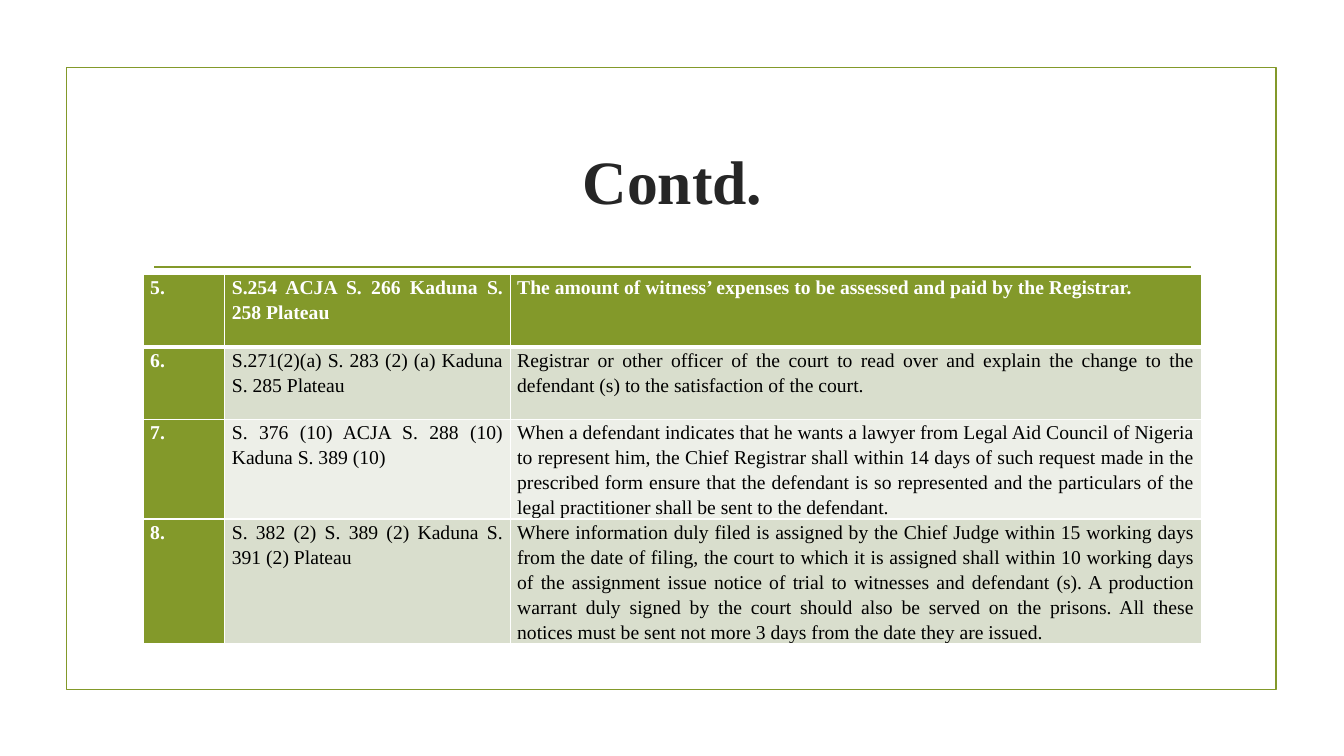
from lxml import etree
from pptx import Presentation
from pptx.dml.color import RGBColor
from pptx.enum import shapes, text
from pptx.oxml import ns
from pptx.util import Inches, Pt

OLIVE = RGBColor(0x83, 0x99, 0x2A)
SAGE = RGBColor(0xD9, 0xDE, 0xCD)
MIST = RGBColor(0xED, 0xEF, 0xE8)
CHARCOAL = RGBColor(0x26, 0x26, 0x26)
WHITE = RGBColor(0xFF, 0xFF, 0xFF)
BLACK = RGBColor(0, 0, 0)
FONT = "Times New Roman"

COLUMN_WIDTHS = (0.81, 2.83, 6.86)
ROW_HEIGHTS = (0.72, 0.72, 0.99, 1.23)
DUTIES = (
    ("5.", "S.254 ACJA S. 266 Kaduna S. 258 Plateau",
     "The amount of witness’ expenses to be assessed and paid by the Registrar."),
    ("6.", "S.271(2)(a) S. 283 (2) (a) Kaduna S. 285 Plateau",
     "Registrar or other officer of the court to read over and explain the change "
     "to the defendant (s) to the satisfaction of the court."),
    ("7.", "S. 376 (10) ACJA S. 288 (10) Kaduna S. 389 (10)",
     "When a defendant indicates that he wants a lawyer from Legal Aid Council of "
     "Nigeria to represent him, the Chief Registrar shall within 14 days of such "
     "request made in the prescribed form ensure that the defendant is so represented "
     "and the particulars of the legal practitioner shall be sent to the defendant."),
    ("8.", "S. 382 (2) S. 389 (2) Kaduna S. 391 (2) Plateau",
     "Where information duly filed is assigned by the Chief Judge within 15 working "
     "days from the date of filing, the court to which it is assigned shall within 10 "
     "working days of the assignment issue notice of trial to witnesses and defendant "
     "(s). A production warrant duly signed by the court should also be served on the "
     "prisons. All these notices must be sent not more 3 days from the date they are "
     "issued."),
)


def set_font(font, size, color, bold):
    for name, value in {"name": FONT, "size": Pt(size), "bold": bold}.items():
        setattr(font, name, value)
    font.color.rgb = color


def add_frame(slide):
    frame = slide.shapes.add_shape(shapes.MSO_SHAPE.RECTANGLE, Inches(0.66),
                                   Inches(0.67), Inches(12), Inches(6.17))
    frame.shadow.inherit = False
    frame.fill.background()
    frame.line.color.rgb = OLIVE
    frame.line.width = Pt(1.25)


def add_rule(slide):
    rule = slide.shapes.add_connector(shapes.MSO_CONNECTOR.STRAIGHT, Inches(1.53),
                                      Inches(2.65), Inches(11.81), Inches(2.65))
    rule.line.color.rgb = OLIVE
    rule.line.width = Pt(1.25)
    etree.SubElement(rule.element.spPr, ns.qn("a:effectLst"))


def set_title(slide, wording):
    title = slide.shapes.title
    box = {"left": 1.42, "top": 1.07, "width": 10.5, "height": 1.43}
    for name, value in box.items():
        setattr(title, name, Inches(value))
    title.text_frame.text = wording
    title.text_frame.vertical_anchor = text.MSO_ANCHOR.MIDDLE
    heading = title.text_frame.paragraphs[0]
    heading.alignment = text.PP_ALIGN.CENTER
    set_font(heading.runs[0].font, 44, CHARCOAL, True)


def set_borders(cell, widths):
    """Draw white borders; widths are points for left, right, top and bottom."""
    properties = cell._tc.get_or_add_tcPr()
    for index, (side, width) in enumerate(zip("LRTB", widths)):
        border = etree.Element(ns.qn(f"a:ln{side}"), w=str(Pt(width)))
        fill = etree.SubElement(border, ns.qn("a:solidFill"))
        etree.SubElement(fill, ns.qn("a:srgbClr"), val=str(WHITE))
        properties.insert(index, border)


def fill_cell(cell, wording, row, column):
    emphasized = row == 0 or column == 0
    cell.text = wording
    margins = {"margin_left": 0.07, "margin_right": 0.07,
               "margin_top": 0, "margin_bottom": 0}
    for name, value in margins.items():
        setattr(cell, name, Inches(value))
    cell.fill.solid()
    cell.fill.fore_color.rgb = OLIVE if emphasized else (SAGE if row % 2 else MIST)
    set_borders(cell, (1, 1, 3 if row == 1 else 1, 3 if row == 0 else 1))
    paragraph = cell.text_frame.paragraphs[0]
    paragraph.alignment = text.PP_ALIGN.JUSTIFY
    paragraph.line_spacing = 1.15
    set_font(paragraph.runs[0].font, 14, WHITE if emphasized else BLACK, emphasized)


def add_duties_table(slide):
    table = slide.shapes.add_table(
        len(DUTIES), len(COLUMN_WIDTHS), Inches(1.42), Inches(2.72),
        Inches(sum(COLUMN_WIDTHS)), Inches(sum(ROW_HEIGHTS))).table
    for column, width in zip(table.columns, COLUMN_WIDTHS):
        column.width = Inches(width)
    for row, height in zip(table.rows, ROW_HEIGHTS):
        row.height = Inches(height)
    table.first_col = True
    for row, duty in enumerate(DUTIES):
        for column, wording in enumerate(duty):
            fill_cell(table.cell(row, column), wording, row, column)


def main():
    deck = Presentation()
    deck.slide_width = Inches(13.33)
    deck.slide_height = Inches(7.5)
    slide = deck.slides.add_slide(deck.slide_layouts.get_by_name("Title Only"))
    add_frame(slide)
    add_rule(slide)
    set_title(slide, "Contd.")
    add_duties_table(slide)
    deck.save("out.pptx")


if __name__ == "__main__":
    main()
